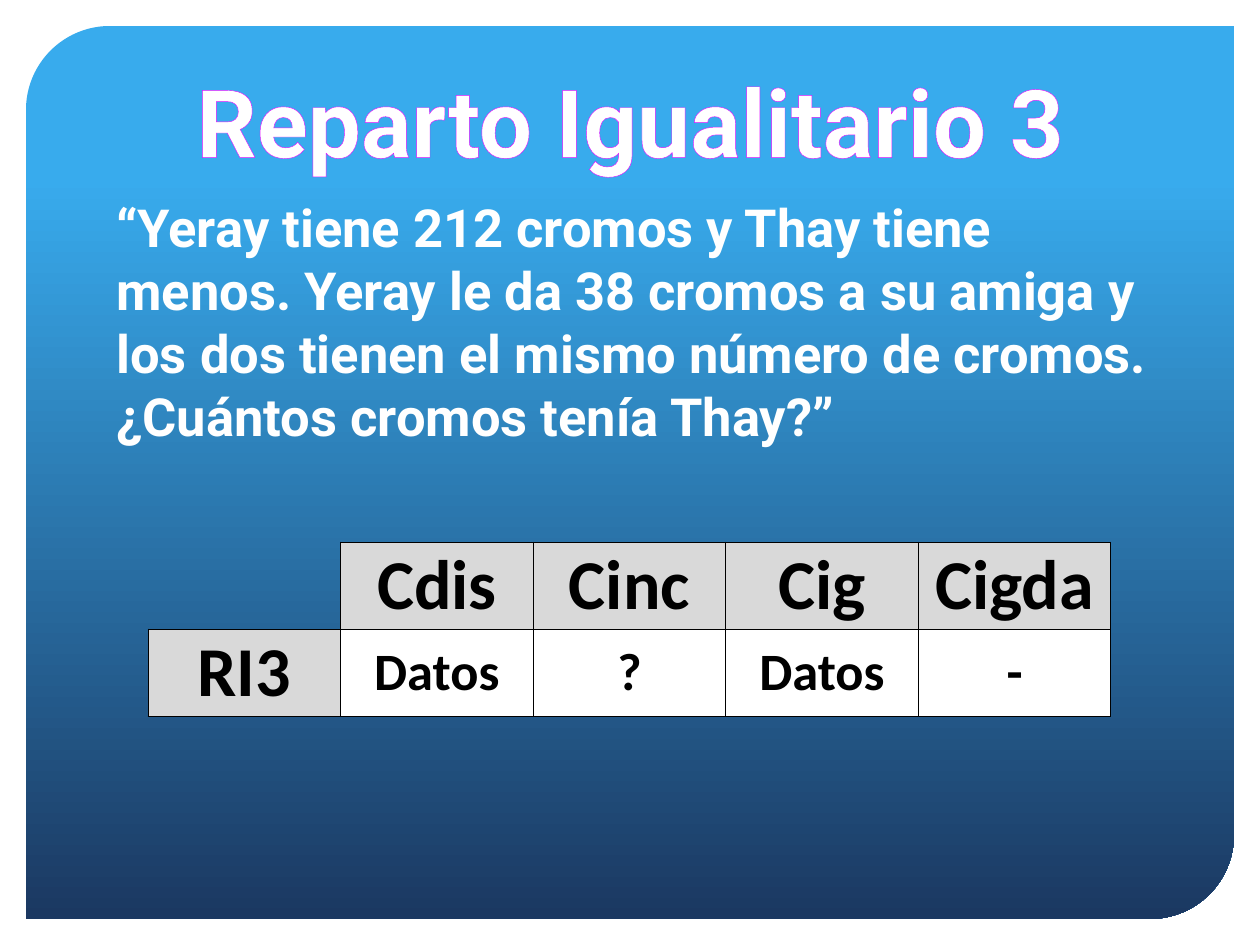
from dataclasses import dataclass

from lxml import etree
from pptx import Presentation
from pptx.dml.color import RGBColor
from pptx.enum.shapes import MSO_SHAPE
from pptx.enum.text import MSO_ANCHOR, MSO_AUTO_SIZE, PP_ALIGN
from pptx.oxml.ns import qn
from pptx.util import Emu, Pt

PANEL = MSO_SHAPE.ROUND_2_DIAG_RECTANGLE
MIDDLE = MSO_ANCHOR.MIDDLE
GROW = MSO_AUTO_SIZE.SHAPE_TO_FIT_TEXT
LEFT, CENTER = PP_ALIGN.LEFT, PP_ALIGN.CENTER
SCALE = 914400 / 126


@dataclass(frozen=True)
class Theme:
    sky: str = "38ABED"
    navy: str = "1B3861"
    white: str = "FFFFFF"
    black: str = "000000"
    gray: str = "D9D9D9"
    pink: str = "E113FF"
    font: str = "Roboto"
    grid_font: str = "Calibri"
    title: int = 54
    head: int = 40
    body: int = 30
    hair: float = 0.5


def px(size):
    return Emu(round(size * SCALE))


def add_line(parent, tag, index, color, width):
    """Insert a line element; without a colour the line is hidden."""
    line = etree.Element(qn(tag), w=str(Pt(width)))
    if color:
        fill = etree.SubElement(line, qn("a:solidFill"))
        etree.SubElement(fill, qn("a:srgbClr"), val=color)
    else:
        etree.SubElement(line, qn("a:noFill"))
    parent.insert(index, line)


class Deck:
    def __init__(self, theme):
        self.theme = theme
        self.prs = Presentation()
        self.prs.slide_width, self.prs.slide_height = px(1260), px(945)
        self.slide = self.prs.slides.add_slide(self.prs.slide_layouts[6])

    def set_text(self, frame, text, font, size, color, align):
        """Fill a text frame with one bold paragraph and return its run."""
        frame.text = text
        para = frame.paragraphs[0]
        para.alignment = align
        run = para.runs[0]
        run.font.name = font
        run.font.size = Pt(size)
        run.font.bold = True
        run.font.color.rgb = RGBColor.from_string(color)
        return run

    def panel(self, x, y, w, h):
        shape = self.slide.shapes.add_shape(PANEL, px(x), px(y), px(w), px(h))
        shape.shadow.inherit = False
        shape.adjustments[0] = 0.094
        shape.adjustments[1] = 0
        shape.line.fill.background()
        shape.fill.gradient()
        shape.fill.gradient_angle = 270
        stops = ((0.17, self.theme.sky), (1, self.theme.navy))
        for stop, (place, color) in zip(shape.fill.gradient_stops, stops):
            stop.position = place
            stop.color.rgb = RGBColor.from_string(color)

    def text(self, x, y, w, h, words, size, align=LEFT, wrap=True, edge=None):
        box = self.slide.shapes.add_textbox(px(x), px(y), px(w), px(h))
        frame = box.text_frame
        frame.word_wrap = wrap
        frame.auto_size = GROW
        run = self.set_text(frame, words, self.theme.font, size,
                            self.theme.white, align)
        if edge:
            add_line(run.font._element, "a:ln", 0, edge, 1)

    def cell(self, cell, words, is_head):
        look = self.theme
        props = cell._tc.get_or_add_tcPr()
        for i, side in enumerate("LRTB"):
            shown = words or side in "RB"
            add_line(props, f"a:ln{side}", i,
                     look.black if shown else None, look.hair)
        if not words:
            cell.fill.background()
            return
        cell.fill.solid()
        cell.fill.fore_color.rgb = RGBColor.from_string(
            look.gray if is_head else look.white)
        cell.vertical_anchor = MIDDLE
        cell.margin_left = cell.margin_right = cell.margin_top = px(1)
        cell.margin_bottom = 0
        self.set_text(cell.text_frame, words, look.grid_font,
                      look.head if is_head else look.body, look.black, CENTER)

    def table(self, x, y, w, h, rows):
        count = len(rows[0])
        grid = self.slide.shapes.add_table(
            len(rows), count, px(x), px(y), px(w), px(h)).table
        grid.first_row = grid.horz_banding = False
        for col in grid.columns:
            col.width = px(w / count)
        for r, row in enumerate(rows):
            grid.rows[r].height = px(h / len(rows))
            for c, words in enumerate(row):
                self.cell(grid.cell(r, c), words, r == 0 or c == 0)


def main():
    theme = Theme()
    deck = Deck(theme)
    deck.panel(26, 26, 1208, 893)
    deck.text(160, 57, 941, 127, "Reparto Igualitario 3", theme.title,
              align=CENTER, wrap=False, edge=theme.pink)
    deck.table(148, 542, 963, 174, [
        ["", "Cdis", "Cinc", "Cig", "Cigda"],
        ["RI3", "Datos", "?", "Datos", "-"],
    ])
    deck.text(104, 189, 1062, 267,
              "“Yeray tiene 212 cromos y Thay tiene menos. Yeray le da 38 "
              "cromos a su amiga y los dos tienen el mismo número de cromos. "
              "¿Cuántos cromos tenía Thay?”", theme.body)
    deck.prs.save("out.pptx")


if __name__ == "__main__":
    main()
